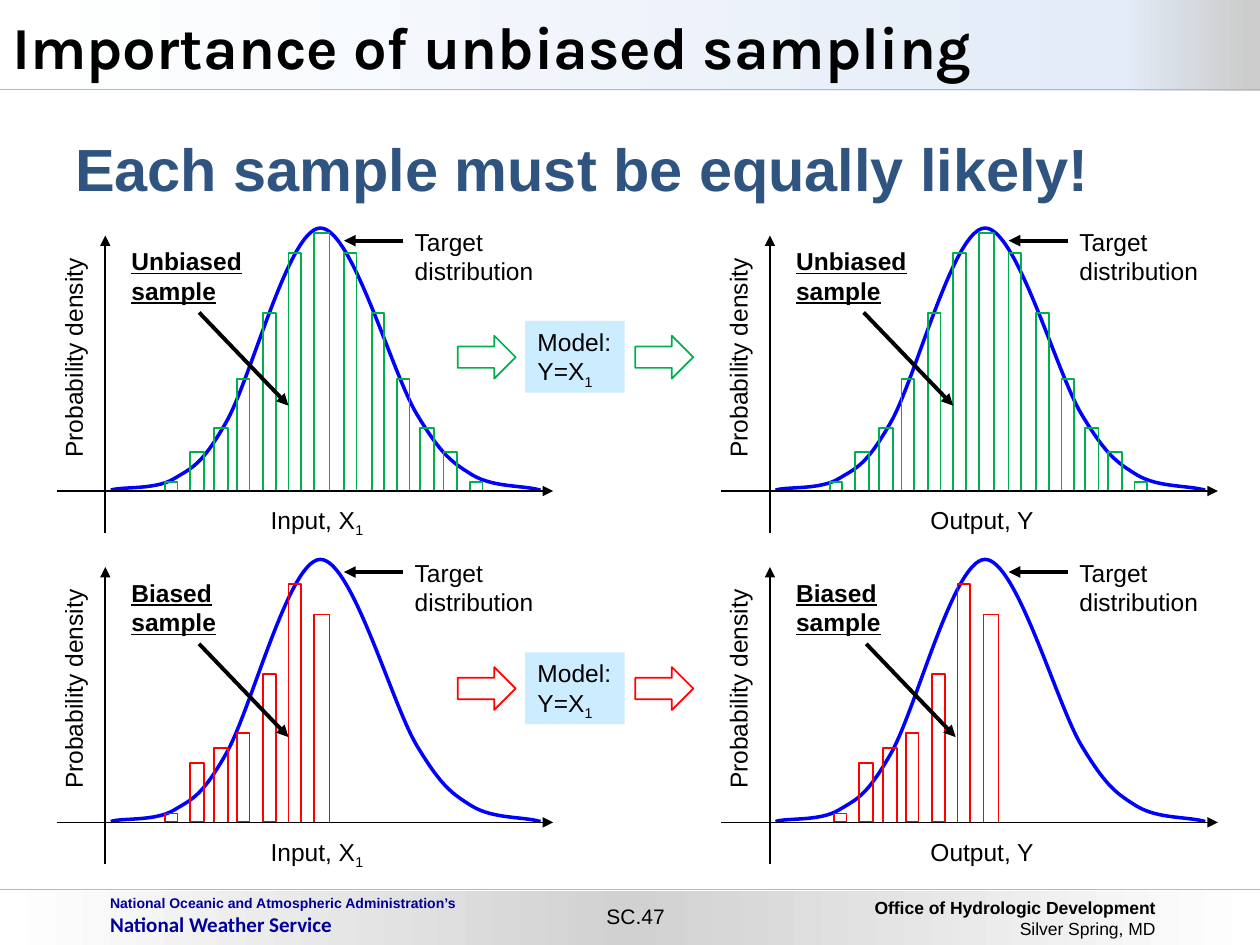
from copy import deepcopy
from typing import NamedTuple

from lxml import etree
from pptx import Presentation
from pptx import util as u
from pptx.dml.color import RGBColor
from pptx.enum import shapes, text
from pptx.oxml.ns import qn

CELL = 0.1
PANEL_COLS, PANEL_ROWS = 52.75, 26.3
BASELINE = 38.97
BLACK, GREEN, RED = "000000", "00B050", "FF0000"
RULE = "A4BDDC"
BODY = {"name": "Arial", "size": u.Pt(14)}
STRONG = {**BODY, "bold": True, "underline": True}


class Box(NamedTuple):
    col: float
    row: float
    cols: float
    rows: float

    def moved(self, dx: float, dy: float) -> "Box":
        return Box(self.col + dx, self.row + dy, self.cols, self.rows)


class Bar(NamedTuple):
    col: float
    cols: float
    rows: float


class Sample(NamedTuple):
    name: str
    name_cols: float
    color: str
    bars: list[Bar]
    output_bars_shift: float
    output_pointer_shift: float


class Axis(NamedTuple):
    caption: str
    box: Box


UNBIASED_BARS = [
    Bar(13.1, 1, 0.7), Bar(15.1, 1.1, 3.1), Bar(17, 1.1, 5), Bar(18.8, 1, 8.9),
    Bar(20.9, 1, 14.1), Bar(22.9, 1, 18.9), Bar(24.95, 1.2, 20.5), Bar(27.3, 1, 18.9),
    Bar(29.5, 1, 14.1), Bar(31.5, 1, 8.9), Bar(33.35, 1.1, 5), Bar(35.2, 1.1, 3.1),
    Bar(37.3, 1, 0.7),
]
BIASED_BARS = [
    Bar(13.1, 1, 0.7), Bar(15.1, 1.1, 4.7), Bar(17, 1.1, 5.9), Bar(18.8, 1, 7.1),
    Bar(20.9, 1, 11.8), Bar(22.9, 1, 18.9), Bar(24.95, 1.2, 16.5),
]
SAMPLES = [
    Sample("Unbiased", 11.4, GREEN, UNBIASED_BARS, 0, 0),
    Sample("Biased", 9, RED, BIASED_BARS, 0.35, 0.2),
]
AXES = [
    Axis("Input, X~1", Box(20.4, 39.6, 9.5, 3.4)),
    Axis("Output, Y", Box(20.05, 39.6, 10.3, 3.4)),
]
CURVE = [
    (8.8, 38.9), (9.6, 38.6), (12.3, 38.9), (13.8, 38), (15.3, 37.1), (16, 36.9),
    (17.9, 33.6), (19.9, 30.2), (22.9, 18.2), (25.4, 18.1), (27.9, 18), (31.1, 29.6),
    (33.1, 32.9), (35.1, 36.2), (35.9, 36.7), (37.5, 37.7), (39.2, 38.7),
    (41.5, 38.5), (42.9, 38.9),
]


def at(cells: float) -> int:
    return u.Inches(cells * CELL)


def rgb(color: str) -> RGBColor:
    return RGBColor.from_string(color)


def write(sp, lines: list[str], formats: list[dict], color: str = BLACK,
          align=text.PP_ALIGN.LEFT, **frame):
    tf = sp.text_frame
    settings = {"word_wrap": False, "vertical_anchor": text.MSO_ANCHOR.TOP, **frame}
    for key, value in settings.items():
        setattr(tf, key, value)
    for i, line in enumerate(lines):
        p = tf.paragraphs[0] if i == 0 else tf.add_paragraph()
        p.alignment = align
        for j, piece in enumerate(line.split("~")):
            r = p.add_run()
            r.text = piece
            for key, value in formats[min(i, len(formats) - 1)].items():
                setattr(r.font, key, value)
            r.font.color.rgb = rgb(color)
            if j == 1:
                r.font._element.set("baseline", "-25000")
    return sp


def label(s, box: Box, lines: list[str], formats: list[dict], **kwargs):
    return write(s.shapes.add_textbox(*map(at, box)), lines, formats, **kwargs)


def block(s, box: Box, fill: str = "", line: str = "",
          kind=shapes.MSO_SHAPE.RECTANGLE):
    sp = s.shapes.add_shape(kind, *map(at, box))
    sp.shadow.inherit = False
    if fill:
        sp.fill.solid()
        sp.fill.fore_color.rgb = rgb(fill)
    else:
        sp.fill.background()
    if line:
        sp.line.color.rgb = rgb(line)
        sp.line.width = u.Pt(1)
    else:
        sp.line.fill.background()
    return sp


def band(s, box: Box, stops: list[tuple[float, str]]):
    sp = block(s, box)
    sp.fill.gradient()
    sp.fill.gradient_angle = 0
    gs_list = sp._element.spPr.find(qn("a:gradFill")).find(qn("a:gsLst"))
    gs_list.append(deepcopy(gs_list[-1]))
    for stop, (position, color) in zip(sp.fill.gradient_stops, stops):
        stop.position = position
        stop.color.rgb = rgb(color)


def line(s, x1: float, y1: float, x2: float, y2: float, width: float = 1,
         color: str = BLACK, arrow: str = "a:tailEnd"):
    sp = s.shapes.add_connector(shapes.MSO_CONNECTOR.STRAIGHT, *map(at, (x1, y1, x2, y2)))
    sp.line.color.rgb = rgb(color)
    sp.line.width = u.Pt(width)
    if arrow:
        etree.SubElement(sp.line._get_or_add_ln(), qn(arrow), type="triangle")
    etree.SubElement(sp._element.spPr, qn("a:effectLst"))


def curve(s, dx: float, dy: float):
    points = [(at(x + dx), at(y + dy)) for x, y in CURVE]
    builder = s.shapes.build_freeform(*points[0])
    builder.add_line_segments(points[1:], close=False)
    sp = builder.convert_to_shape()
    segments = list(sp._element.iter(qn("a:lnTo")))
    for i in range(0, len(segments), 3):
        first, *others = segments[i:i + 3]
        bend = etree.Element(qn("a:cubicBezTo"))
        first.addprevious(bend)
        for segment in (first, *others):
            bend.append(segment[0])
            segment.getparent().remove(segment)
    sp.shadow.inherit = False
    sp.fill.background()
    sp.line.color.rgb = rgb("0000FF")
    sp.line.width = u.Pt(2)


def panel(s, sample: Sample, axis: Axis, column: int, row: int):
    dx, dy = column * PANEL_COLS, row * PANEL_ROWS
    line(s, 8.36 + dx, 18.7 + dy, 8.36 + dx, 42.3 + dy, arrow="a:headEnd")
    label(s, axis.box.moved(dx, dy), [axis.caption], [BODY], align=text.PP_ALIGN.CENTER)
    density = label(s, Box(-3.1, 26.65, 17.9, 3.4).moved(dx, dy),
                    ["Probability density"], [BODY])
    density.rotation = 270
    curve(s, dx, dy)
    shift = dx + column * sample.output_bars_shift
    for bar in sample.bars:
        block(s, Box(bar.col + shift, BASELINE - bar.rows + dy, bar.cols, bar.rows),
              line=sample.color)
    px = dx + column * sample.output_pointer_shift
    line(s, 15.8 + px, 24.8 + dy, 22.9 + px, 32.2 + dy, 2.25)
    line(s, 4.5 + dx, BASELINE + dy, 43.9 + dx, BASELINE + dy)
    label(s, Box(9.45, 19.05, sample.name_cols, 5.7).moved(dx, dy),
          [sample.name, "sample"], [STRONG])
    label(s, Box(31.93, 17.5, 11.5, 5.7).moved(dx, dy), ["Target", "distribution"], [BODY])
    line(s, 32 + dx, 19.1 + dy, 27.3 + dx, 19.1 + dy, 2.25)


def model(s, color: str, row: int):
    dy = row * PANEL_ROWS
    write(block(s, Box(41.67, 25.47, 7.9, 5.7).moved(0, dy), "CCECFF"),
          ["Model:", "Y=X~1"], [BODY])
    for col in (36.33, 50.43):
        block(s, Box(col, 26.65, 4.6, 3.4).moved(0, dy), "FFFFFF", color,
              shapes.MSO_SHAPE.RIGHT_ARROW)


def frame(s):
    line(s, 100, 70.6, 0, 70.6, 0.75, RULE, "")
    band(s, Box(0, 70.7, 100, 4.4), [(0, "FFFFFF"), (0.5, "D1D1D1"), (1, "FFFFFF")])
    office = {"name": "Arial", "size": u.Pt(10)}
    label(s, Box(68.9, 70.7, 23.3, 4.4),
          ["Office of Hydrologic Development", "Silver Spring, MD"],
          [{**office, "bold": True}, office], align=text.PP_ALIGN.RIGHT,
          word_wrap=True, margin_left=at(0.1), margin_right=at(0.5))
    label(s, Box(7.75, 70.5, 33.3, 4.3),
          ["National Oceanic and Atmospheric Administration’s", "National Weather Service"],
          [{"name": "Arial", "size": u.Pt(8), "bold": True},
           {"name": "Calibri", "size": u.Pt(12), "bold": True}],
          color="000099", word_wrap=True)
    label(s, Box(47, 71.2, 6.9, 3), ["SC.47"], [{"name": "Arial", "size": u.Pt(12)}],
          align=text.PP_ALIGN.CENTER)
    band(s, Box(0, 0, 100, 7.2), [(0, "FFFFFF"), (0.89, "E3ECF8"), (0.99, "CCCCCC")])
    line(s, 100, 7.1, -0.1, 7.1, 0.75, RULE, "")
    label(s, Box(0, 0, 100, 7.2), ["Importance of unbiased sampling"],
          [{"name": "Karla", "size": u.Pt(34), "bold": True}],
          word_wrap=True, vertical_anchor=text.MSO_ANCHOR.MIDDLE)
    message = write(block(s, Box(5, 10, 93.6, 56.7), "FFFFFF"),
                    ["Each sample must be equally likely!"],
                    [{"name": "Arial", "size": u.Pt(34), "bold": True}],
                    color="305480", word_wrap=True)
    properties = message.text_frame.paragraphs[0]._p.get_or_add_pPr()
    for key, value in {"marL": 6.7, "indent": -6.7}.items():
        properties.set(key, str(at(value)))


def main():
    prs = Presentation()
    prs.slide_width, prs.slide_height = at(100), at(75)
    s = prs.slides.add_slide(prs.slide_layouts[6])
    frame(s)
    for row, sample in enumerate(SAMPLES):
        for column, axis in enumerate(AXES):
            panel(s, sample, axis, column, row)
        model(s, sample.color, row)
    prs.save("out.pptx")


if __name__ == "__main__":
    main()
